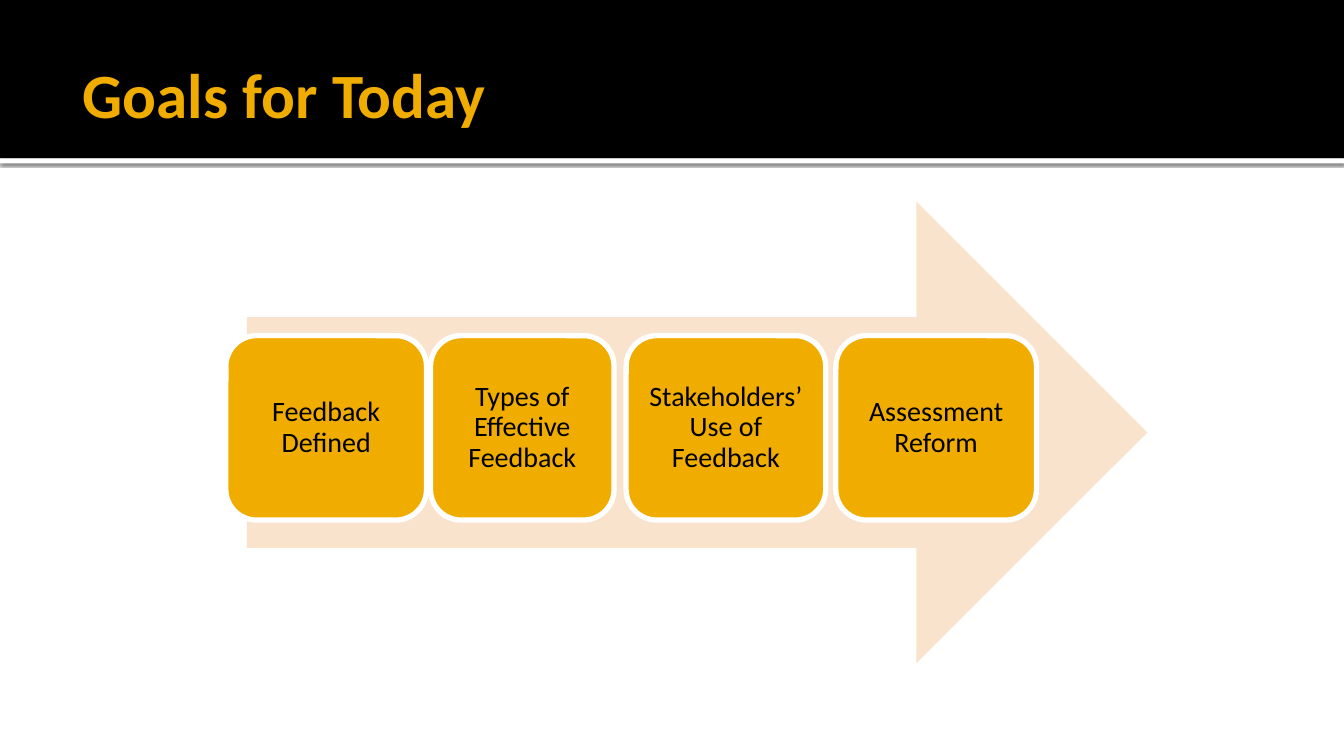
from lxml import etree
from pptx import Presentation
from pptx.dml.color import RGBColor
from pptx.enum.shapes import MSO_SHAPE as Shape
from pptx.enum.text import MSO_ANCHOR as Anchor, MSO_AUTO_SIZE as AutoSize, PP_ALIGN as Align
from pptx.oxml.ns import qn
from pptx.util import Inches, Pt

COLORS = {"black": "000000", "white": "FFFFFF", "gold": "F0AD00", "peach": "F9E3CC"}
FONT = "Calibri"
STEP_TOP, STEP_HEIGHT = 3.33, 1.83
STEPS = [
    ("Feedback Defined", 2.24, 1.99),
    ("Types of Effective Feedback", 4.27, 1.82),
    ("Stakeholders’ Use of Feedback", 6.21, 1.98),
    ("Assessment Reform", 8.29, 1.99),
]


def color(name):
    return RGBColor.from_string(COLORS[name])


def add_block(shapes, kind, left, top, width, height, fill):
    shape = shapes.add_shape(kind, Inches(left), Inches(top), Inches(width), Inches(height))
    shape.shadow.inherit = False
    shape.fill.solid()
    shape.fill.fore_color.rgb = color(fill)
    shape.line.fill.background()
    return shape


def add_shadow(shape):
    effects = shape.element.spPr.find(qn("a:effectLst"))
    shadow = etree.SubElement(effects, qn("a:outerShdw"), blurRad=str(Pt(2.5)),
                              dist=str(Pt(0.8)), dir="5400000", rotWithShape="0")
    tint = etree.SubElement(shadow, qn("a:srgbClr"), val=COLORS["black"])
    etree.SubElement(tint, qn("a:alpha"), val="60000")


def write_text(shape, text, size, font_color, align, margins, bold=False):
    frame = shape.text_frame
    frame.text = text
    frame.word_wrap = True
    frame.auto_size = AutoSize.NONE
    frame.vertical_anchor = Anchor.MIDDLE
    frame.margin_left, frame.margin_top, frame.margin_right, frame.margin_bottom = map(Inches, margins)
    paragraph = frame.paragraphs[0]
    paragraph.alignment = align
    font = paragraph.runs[0].font
    font.name, font.size, font.bold = FONT, Pt(size), bold
    font.color.rgb = color(font_color)
    return paragraph


def add_header(slide):
    strip = add_block(slide.shapes, Shape.RECTANGLE, 0, 1.57, 13.33, 0.05, "white")
    add_shadow(strip)
    add_block(slide.shapes, Shape.RECTANGLE, 0, 0, 13.33, 1.57, "black")
    title = slide.shapes.title
    title.left, title.top, title.width, title.height = map(Inches, (0.72, 0.24, 12, 1.37))
    write_text(title, "Goals for Today", 45, "gold", Align.LEFT, (0.1, 0.05, 0.05, 0.05), bold=True)
    title.element.getparent().append(title.element)


def add_step(shapes, text, left, width):
    step = add_block(shapes, Shape.ROUNDED_RECTANGLE, left, STEP_TOP, width, STEP_HEIGHT, "gold")
    step.line.color.rgb = color("white")
    step.line.width = Pt(3.78)
    paragraph = write_text(step, text, 20, "black", Align.CENTER, (0.08,) * 4)
    paragraph.line_spacing = 0.9


def main():
    presentation = Presentation()
    presentation.slide_width, presentation.slide_height = Inches(13.33), Inches(7.5)
    slide = presentation.slides.add_slide(presentation.slide_layouts[5])
    slide.background.fill.solid()
    slide.background.fill.fore_color.rgb = color("white")
    add_header(slide)
    process = slide.shapes.add_group_shape()
    add_block(process.shapes, Shape.RIGHT_ARROW, 2.45, 2, 8.93, 4.58, "peach")
    for text, left, width in STEPS:
        add_step(process.shapes, text, left, width)
    presentation.save("out.pptx")


if __name__ == "__main__":
    main()
